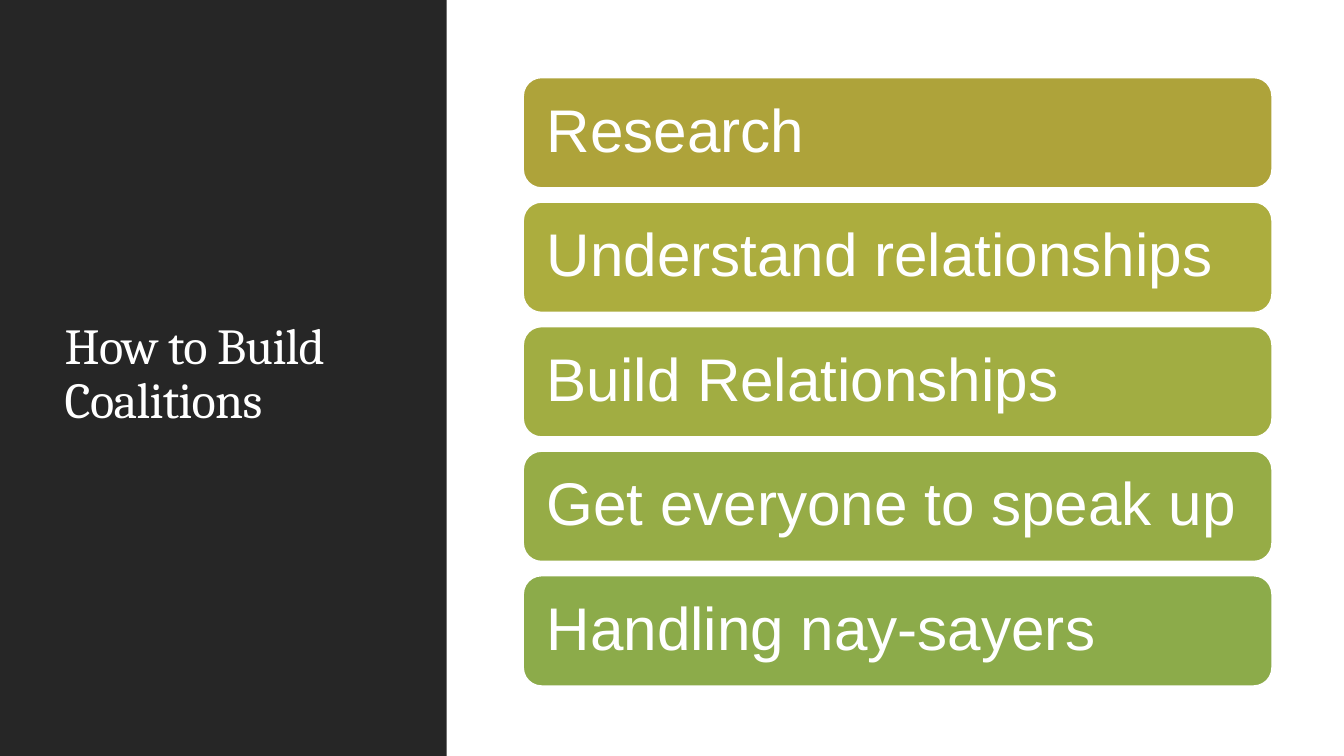
from dataclasses import dataclass

from pptx import Presentation
from pptx.dml.color import RGBColor
from pptx.enum import shapes, text
from pptx.util import Pt


@dataclass(frozen=True)
class Theme:
    dark: str = "262626"
    white: str = "FFFFFF"
    head: str = "Cambria"
    body: str = "Arial"
    big: int = 43
    mid: int = 36


theme = Theme()


def paint(shape, fill, line=None):
    shape.shadow.inherit = False
    shape.fill.solid()
    shape.fill.fore_color.rgb = RGBColor.from_string(fill)
    if line:
        shape.line.color.rgb = RGBColor.from_string(line)
        shape.line.width = Pt(1.25)
    else:
        shape.line.fill.background()


def style(para, face, size):
    para.alignment = text.PP_ALIGN.LEFT
    para.line_spacing = 0.9
    para.font.name = face
    para.font.size = Pt(size)
    para.font.color.rgb = RGBColor.from_string(theme.white)


deck = Presentation()
deck.slide_width, deck.slide_height = Pt(960), Pt(540)
slide = deck.slides.add_slide(deck.slide_layouts.get_by_name("Title Only"))

# Dark side panel, placed behind the title
panel = slide.shapes.add_shape(
    shapes.MSO_SHAPE.RECTANGLE, 0, 0, Pt(319), deck.slide_height)
paint(panel, theme.dark)
title = slide.shapes.title
title._element.addprevious(panel._element)

title.left, title.top = Pt(39), Pt(41)
title.width, title.height = Pt(243), Pt(454)
frame = title.text_frame
frame.text = "How to Build Coalitions"
frame.word_wrap = True
frame.auto_size = text.MSO_AUTO_SIZE.NONE
frame.vertical_anchor = text.MSO_ANCHOR.MIDDLE
style(frame.paragraphs[0], theme.head, theme.mid)
for run in frame.paragraphs[0].runs:
    run.font._element.set("spc", "-50")

# Stack of steps
steps = [
    ("Research", "AEA33A"),
    ("Understand relationships", "ACAD3E"),
    ("Build Relationships", "A1AD42"),
    ("Get everyone to speak up", "96AC46"),
    ("Handling nay-sayers", "8CAB4A"),
]
left, top, width, height, pitch = 373.7, 55.3, 535, 79, 88.95
for i, (label, color) in enumerate(steps):
    bar = slide.shapes.add_shape(
        shapes.MSO_SHAPE.ROUNDED_RECTANGLE,
        Pt(left), Pt(top + i * pitch), Pt(width), Pt(height))
    paint(bar, color, theme.white)
    frame = bar.text_frame
    frame.text = label
    frame.word_wrap = True
    frame.vertical_anchor = text.MSO_ANCHOR.MIDDLE
    frame.margin_left = frame.margin_right = Pt(13)
    frame.margin_top = frame.margin_bottom = Pt(13)
    style(frame.paragraphs[0], theme.body, theme.big)

deck.save("out.pptx")
